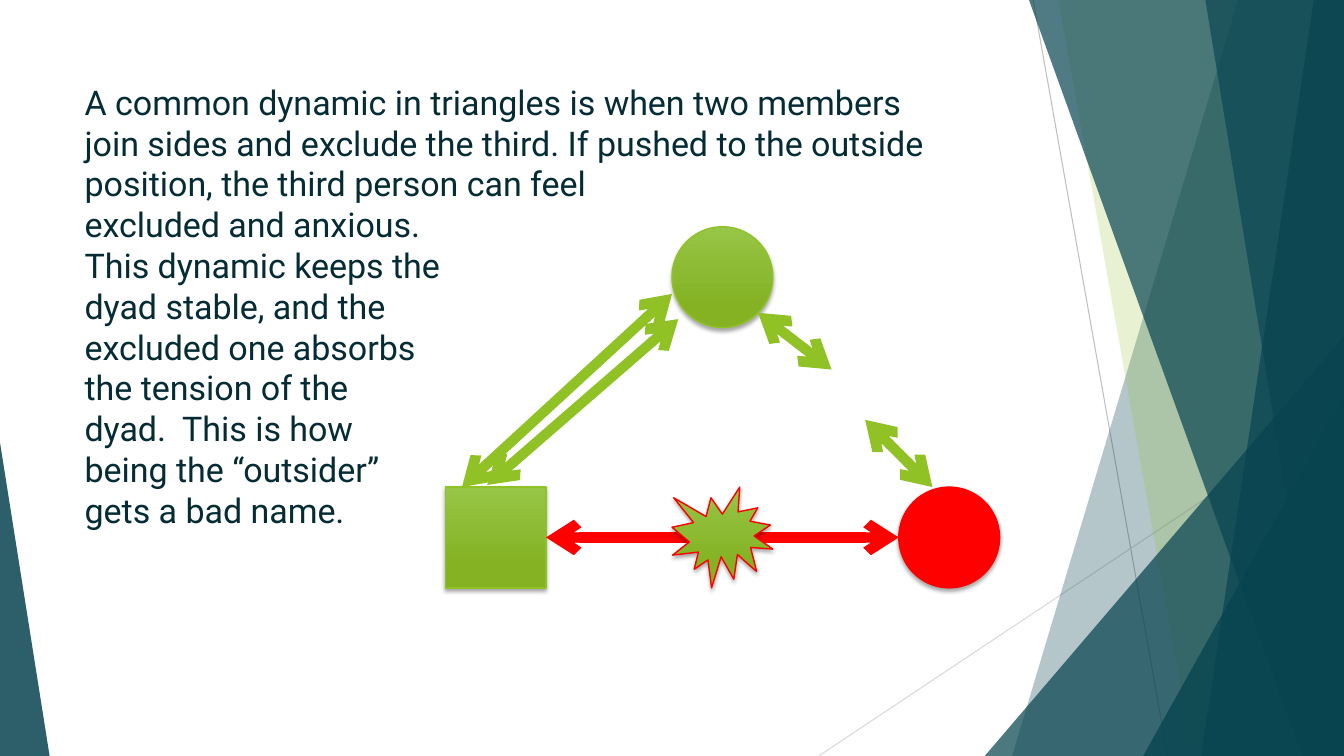
from lxml import etree
from pptx import Presentation
from pptx import util as u
from pptx.dml.color import RGBColor
from pptx.enum import shapes, text
from pptx.oxml.ns import qn

TEAL, GREEN, RED, INK = "084450", "90C226", "FF0000", "052C34"
GRADIENT = ((0, "97C547"), (0.78, "84B223"))
COLS, ROWS = 160, 90
NODE = 12


def rgb(value):
    return RGBColor.from_string(value)


def sub(parent, tag, **attrs):
    return etree.SubElement(parent, qn(tag), attrs)


class Canvas:
    """Draws styled elements on one slide, measured in grid columns and rows."""

    def __init__(self, prs):
        self.s = prs.slides.add_slide(prs.slide_layouts[6])
        self.cell = prs.slide_width / COLS
        self.font, self.size = "Roboto", 24.3

    def grid(self, *cells):
        return [round(c * self.cell) for c in cells]

    def tint(self, sp, color, alpha):
        sp.fill.solid()
        sp.fill.fore_color.rgb = rgb(color)
        sp.line.fill.background()
        sp.shadow.inherit = False
        clr = sp.fill._xPr.find(qn("a:solidFill"))[0]
        sub(clr, "a:alpha", val=str(alpha * 1000))

    def facet(self, top, bottom, color, alpha):
        corners = [(COLS, 0), (COLS, ROWS), (bottom, ROWS)]
        fb = self.s.shapes.build_freeform(*self.grid(top, 0))
        fb.add_line_segments([self.grid(*c) for c in corners], close=True)
        self.tint(fb.convert_to_shape(), color, alpha)

    def triangle(self, x, y, w, apex, alpha):
        sp = self.s.shapes.add_shape(
            shapes.MSO_SHAPE.ISOSCELES_TRIANGLE, *self.grid(x, y, w, ROWS - y))
        sp.adjustments[0] = apex
        self.tint(sp, TEAL, alpha)

    def line(self, start, end, color, width, arrows=False):
        cn = self.s.shapes.add_connector(
            shapes.MSO_CONNECTOR.STRAIGHT, *self.grid(*start, *end))
        cn.line.width = u.Pt(width)
        cn.line.color.rgb = rgb(color)
        if arrows:
            for tag in ("a:headEnd", "a:tailEnd"):
                sub(cn.line._get_or_add_ln(), tag, type="arrow")
        sub(cn._element.spPr, "a:effectLst")

    def node(self, kind, x, y, line=GREEN, fill=None):
        sp = self.s.shapes.add_shape(kind, *self.grid(x, y, NODE, NODE))
        if fill:
            sp.fill.solid()
            sp.fill.fore_color.rgb = rgb(fill)
        else:
            sp.fill.gradient()
            sp.fill.gradient_angle = 270
            for stop, (position, color) in zip(sp.fill.gradient_stops, GRADIENT):
                stop.position = position
                stop.color.rgb = rgb(color)
        sp.line.color.rgb = rgb(line)
        sp.line.width = u.Pt(1)
        sp.shadow.inherit = False
        effects = sp._element.spPr.find(qn("a:effectLst"))
        shadow = sub(effects, "a:outerShdw", blurRad=str(u.Pt(3)), dist=str(u.Pt(2)),
                     dir="5400000", rotWithShape="0")
        sub(sub(shadow, "a:srgbClr", val="000000"), "a:alpha", val="35000")

    def paragraph(self, x, y, w, h, lines):
        tf = self.s.shapes.add_textbox(*self.grid(x, y, w, h)).text_frame
        tf.word_wrap = True
        tf.vertical_anchor = text.MSO_ANCHOR.TOP
        p = tf.paragraphs[0]
        p.text = "\v".join(lines)
        p.font.name, p.font.size = self.font, u.Pt(self.size)
        p.font.color.rgb = rgb(INK)


def main():
    prs = Presentation()
    prs.slide_width, prs.slide_height = u.Inches(13.33), u.Inches(7.5)
    c = Canvas(prs)

    c.line((123, 0), (139, ROWS), "BFBFBF", 0.75)
    c.line((COLS, 48.4), (97.5, ROWS), "D9D9D9", 0.75)
    c.facet(147.4, 120.5, TEAL, 30)
    c.facet(126, 142, GREEN, 20)
    c.triangle(117.25, 40, 42.75, 1, 72)
    for top, bottom, alpha in ((122.5, 155, 70), (156.4, 143, 70), (143.5, 158.2, 65)):
        c.facet(top, bottom, TEAL, alpha)
    c.triangle(136.1, 47.2, 23.9, 1, 80)
    c.triangle(0, 52.7, 5.9, 0, 85)

    c.paragraph(8.9, 9.1, 104.4, 67, [
        "A common dynamic in triangles is when two members join sides and exclude "
        "the third. If pushed to the outside position, the third person can feel",
        "excluded and anxious.",
        "This dynamic keeps the",
        "dyad stable, and the",
        "excluded one absorbs",
        "the tension of the",
        "dyad.  This is how",
        "being the “outsider”",
        "gets a bad name.",
    ])

    kinds = shapes.MSO_SHAPE
    c.node(kinds.OVAL, 80, 27)
    c.node(kinds.OVAL, 107, 58, RED, RED)
    c.node(kinds.RECTANGLE, 53, 58)
    for start, end, color in (
        ((65, 64), (107, 64), RED),
        ((103, 50), (111, 58), GREEN),
        ((58, 57.75), (80.75, 38), GREEN),
        ((80, 35), (55, 58), GREEN),
        ((99, 44), (90.25, 37.25), GREEN),
    ):
        c.line(start, end, color, 7.25, arrows=True)
    c.node(kinds.EXPLOSION1, 80, 58, RED)

    prs.save("out.pptx")


if __name__ == "__main__":
    main()
